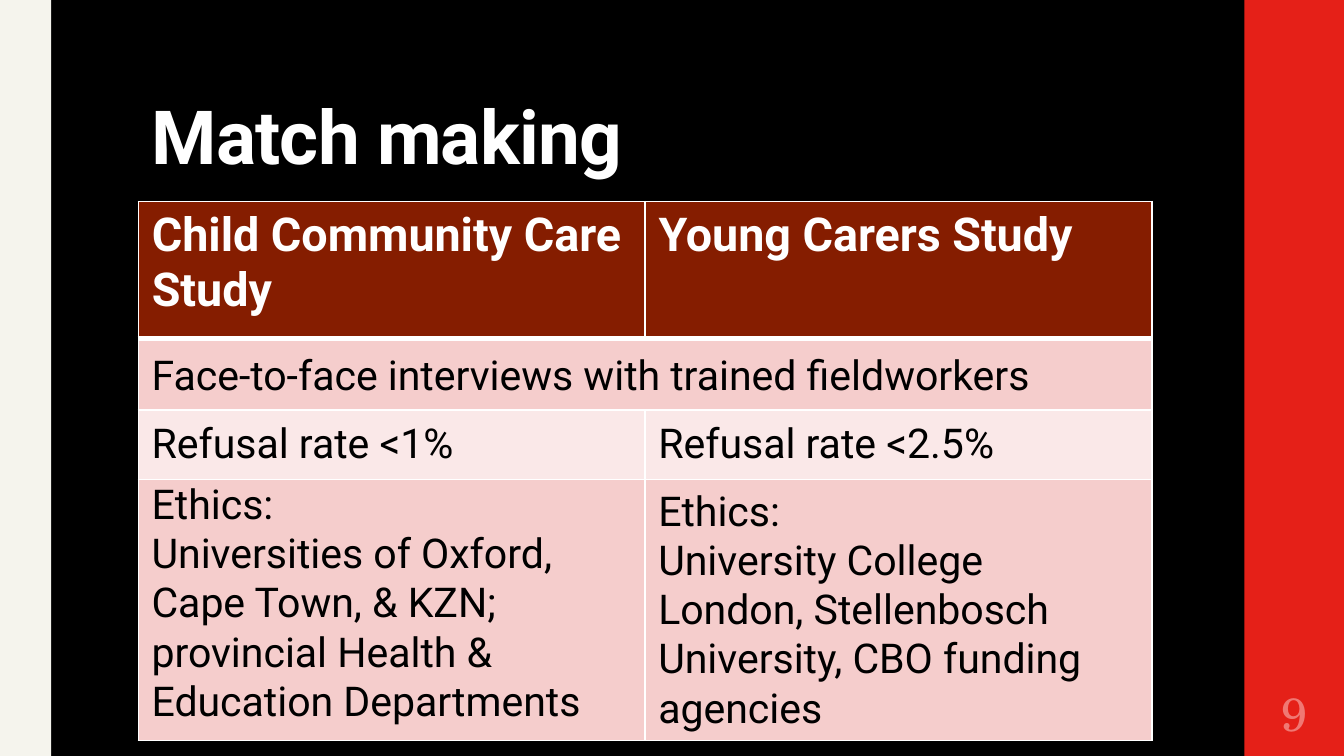
from dataclasses import dataclass

import pptx
import pptx.dml.color
import pptx.enum.shapes
import pptx.enum.text
import pptx.oxml
import pptx.oxml.ns
import pptx.util
from pptx.util import Inches

SANS = "Roboto"
SERIF = "TeX Gyre Schola"
WHITE = "FFFFFF"
BLACK = "000000"
HEADER_RED = "851D00"
ROSE = "F5CDCC"
PALE_ROSE = "FAE8E8"
ANCHOR = pptx.enum.text.MSO_ANCHOR
ALIGN = pptx.enum.text.PP_ALIGN

# Widescreen, 16:9
SLIDE_WIDTH = 10
SLIDE_HEIGHT = SLIDE_WIDTH * 9 / 16
TABLE_LEFT, TABLE_TOP = 1.03, 1.5
COLUMN_WIDTH = 3.77
ROW_HEIGHTS = (1.02, 0.53, 0.52, 1.94)
ROW_FILLS = (HEADER_RED, ROSE, PALE_ROSE, ROSE)
HEADINGS = ("Child Community Care Study", "Young Carers Study")


@dataclass
class Band:
    left: float
    width: float
    color: str


@dataclass
class Label:
    left: float
    top: float
    width: float
    height: float
    lines: tuple[str, ...]
    size: float = 22
    color: str = BLACK
    font: str = SANS
    bold: bool = False
    anchor: ANCHOR = ANCHOR.TOP
    align: ALIGN = ALIGN.LEFT
    margins: tuple[float, float, float, float] = (0.1, 0.05, 0.1, 0.05)


def rgb(color: str) -> pptx.dml.color.RGBColor:
    return pptx.dml.color.RGBColor.from_string(color)


def set_font(paragraph, name: str, size: float, color: str, bold: bool) -> None:
    paragraph.font.name = name
    paragraph.font.size = pptx.util.Pt(size)
    paragraph.font.color.rgb = rgb(color)
    paragraph.font.bold = bold


def draw_band(slide, band: Band) -> None:
    bar = slide.shapes.add_shape(
        pptx.enum.shapes.MSO_SHAPE.RECTANGLE,
        Inches(band.left), 0, Inches(band.width), Inches(SLIDE_HEIGHT))
    bar.shadow.inherit = False
    bar.fill.solid()
    bar.fill.fore_color.rgb = rgb(band.color)
    bar.line.fill.background()


def draw_label(slide, label: Label):
    box = slide.shapes.add_textbox(
        *map(Inches, (label.left, label.top, label.width, label.height)))
    frame = box.text_frame
    frame.word_wrap = True
    frame.vertical_anchor = label.anchor
    (frame.margin_left, frame.margin_top,
     frame.margin_right, frame.margin_bottom) = map(Inches, label.margins)
    frame.text = "\n".join(label.lines)
    for paragraph in frame.paragraphs:
        paragraph.alignment = label.align
        set_font(paragraph, label.font, label.size, label.color, label.bold)
    return frame


def style_cell(cell, fill: str, bottom_width: float) -> None:
    cell.fill.solid()
    cell.fill.fore_color.rgb = rgb(fill)
    properties = cell._tc.get_or_add_tcPr()
    sides = (("L", 1), ("R", 1), ("T", 1), ("B", bottom_width))
    for position, (side, width) in enumerate(sides):
        properties.insert(position, pptx.oxml.parse_xml(
            f'<a:ln{side} {pptx.oxml.ns.nsdecls("a")} w="{pptx.util.Pt(width)}">'
            f'<a:solidFill><a:srgbClr val="{WHITE}"/></a:solidFill></a:ln{side}>'))


def draw_study_table(slide) -> None:
    table = slide.shapes.add_table(
        len(ROW_HEIGHTS), len(HEADINGS), Inches(TABLE_LEFT), Inches(TABLE_TOP),
        Inches(COLUMN_WIDTH * len(HEADINGS)), Inches(sum(ROW_HEIGHTS))).table
    table.first_row = table.horz_banding = False
    for column in table.columns:
        column.width = Inches(COLUMN_WIDTH)
    for index, (row, height, fill) in enumerate(zip(table.rows, ROW_HEIGHTS, ROW_FILLS)):
        row.height = Inches(height)
        for cell in row.cells:
            style_cell(cell, fill, 3 if index == 0 else 1)
    for column, heading in enumerate(HEADINGS):
        cell = table.cell(0, column)
        cell.text = heading
        set_font(cell.text_frame.paragraphs[0], SANS, 25, WHITE, True)
    table.cell(1, 0).merge(table.cell(1, 1))


def main() -> None:
    deck = pptx.Presentation()
    deck.slide_width, deck.slide_height = Inches(SLIDE_WIDTH), Inches(SLIDE_HEIGHT)
    slide = deck.slides.add_slide(deck.slide_layouts[6])
    slide.background.fill.solid()
    slide.background.fill.fore_color.rgb = rgb(BLACK)

    # Side bands
    for band in (Band(9.26, 0.74, "E52018"), Band(0, 0.38, "F5F4ED")):
        draw_band(slide, band)

    # Title, slightly tightened
    title = draw_label(slide, Label(
        TABLE_LEFT, 0.24, 7.95, 1.15, ("Match making",), size=40, color=WHITE,
        bold=True, anchor=ANCHOR.BOTTOM, margins=(0.1, 0.03, 0.1, 0.05)))
    heading = title.paragraphs[0]
    heading.line_spacing = 0.9
    heading.runs[0]._r.get_or_add_rPr().set("spc", "-40")

    # Table grid with the study details laid over it
    draw_study_table(slide)
    second_left = TABLE_LEFT + COLUMN_WIDTH
    details = (
        Label(TABLE_LEFT, 3.51, COLUMN_WIDTH, 1.95, (
            "Ethics:",
            "Universities of Oxford, Cape Town, & KZN; "
            "provincial Health & Education Departments")),
        Label(TABLE_LEFT, 2.55, 2 * COLUMN_WIDTH, 0.47,
              ("Face-to-face interviews with trained fieldworkers",)),
        Label(TABLE_LEFT, 3.06, COLUMN_WIDTH, 0.47, ("Refusal rate <1%",)),
        Label(second_left, 3.06, COLUMN_WIDTH, 0.47, ("Refusal rate <2.5%",)),
        Label(second_left, 3.56, COLUMN_WIDTH, 1.95, (
            "Ethics:",
            "University College London, Stellenbosch University, "
            "CBO funding agencies")),
    )
    for detail in details:
        draw_label(slide, detail)

    # Page number
    draw_label(slide, Label(
        9.26, 5.06, 0.75, 0.49, ("9",), size=25, color="F07873", font=SERIF,
        anchor=ANCHOR.MIDDLE, align=ALIGN.CENTER, margins=(0.05,) * 4))

    deck.save("out.pptx")


if __name__ == "__main__":
    main()
